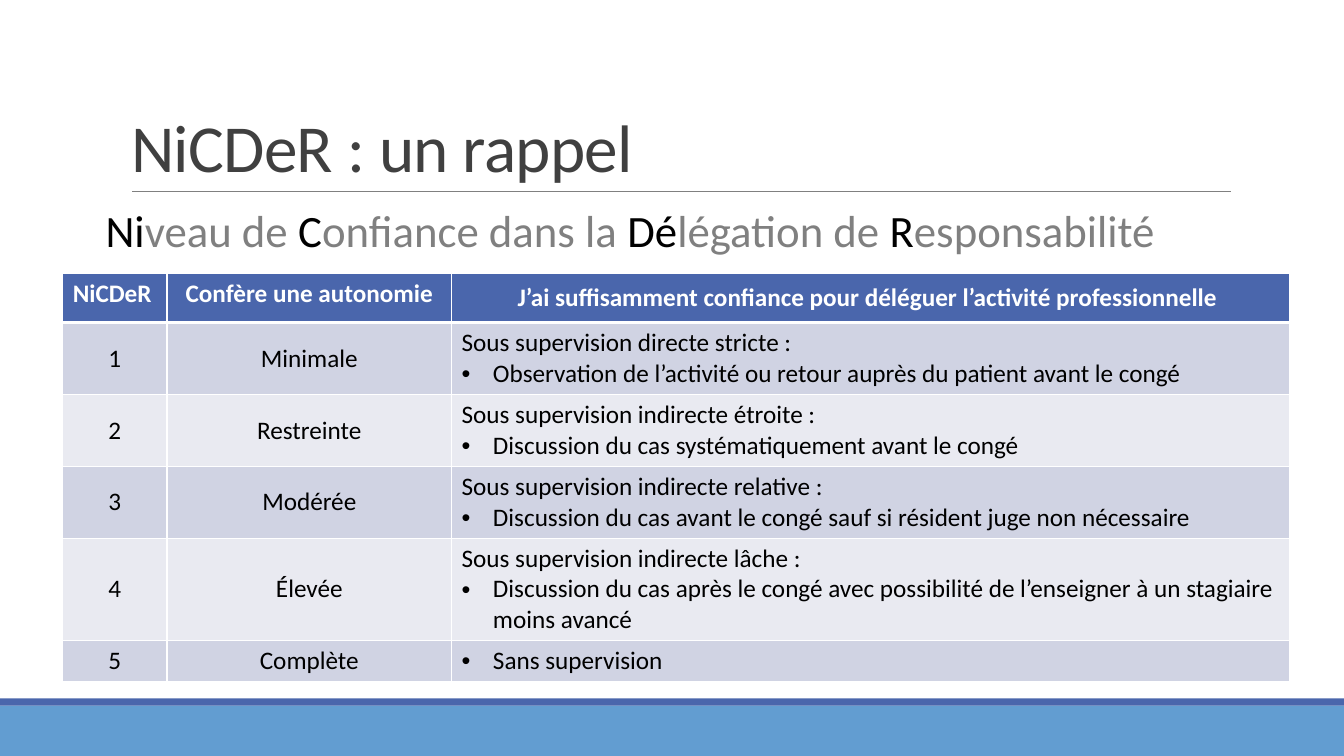
from lxml.etree import SubElement
from pptx import Presentation
from pptx.dml.color import RGBColor
from pptx.enum.shapes import MSO_CONNECTOR as Connector, MSO_SHAPE as Shape
from pptx.enum.text import MSO_ANCHOR as Anchor, MSO_AUTO_SIZE as AutoSize, PP_ALIGN as Align
from pptx.oxml.ns import qn
from pptx.util import Cm, Pt

COLORS = {
    "white": "FFFFFF", "black": "000000", "title": "404040", "gray": "808080",
    "dark blue": "4A66AC", "light blue": "629DD1",
    "odd row": "D0D3E3", "even row": "E9EAF1",
}


def rgb(name):
    return RGBColor.from_string(COLORS[name])


def add_span(para, text, size, color, bold=False):
    """Append one formatted run to a paragraph and return it."""
    span = para.add_run()
    span.text = text
    span.font.name = "Calibri"
    span.font.size = Pt(size)
    span.font.bold = bold
    span.font.color.rgb = rgb(color)
    return span


deck = Presentation()
deck.slide_width, deck.slide_height = Cm(33.87), Cm(19.05)
page = deck.slides.add_slide(deck.slide_layouts[5])

# Footer bands and title rule
for top, height, color in [(17.78, 1.27, "light blue"), (17.6, 0.18, "dark blue")]:
    band = page.shapes.add_shape(Shape.RECTANGLE, 0, Cm(top), deck.slide_width, Cm(height))
    band.shadow.inherit = False
    band.fill.solid()
    band.fill.fore_color.rgb = rgb(color)
    band.line.fill.background()

rule = page.shapes.add_connector(Connector.STRAIGHT, Cm(3.33), Cm(4.82), Cm(31.01), Cm(4.82))
rule.line.color.rgb = rgb("gray")
rule.line.width = Pt(0.5)
SubElement(rule._element.spPr, qn("a:effectLst"))

# Title
title = page.shapes.title
title.left, title.top, title.width, title.height = Cm(3.05), Cm(0.79), Cm(27.94), Cm(4.04)
title.text_frame.auto_size = AutoSize.NONE
title.text_frame.vertical_anchor = Anchor.BOTTOM
para = title.text_frame.paragraphs[0]
para.alignment = Align.LEFT
para.line_spacing = 0.85
span = add_span(para, "NiCDeR : un rappel", 48, "title")
span.font._element.set("spc", "-50")

# Meaning of the acronym: its letters in black, the rest in gray
box = page.shapes.add_textbox(Cm(2.41), Cm(5.13), Cm(27.94), Cm(2.13))
box.text_frame.word_wrap = True
box.text_frame.margin_left, box.text_frame.margin_right = Cm(0.25), 0
para = box.text_frame.paragraphs[0]
para.line_spacing = 0.9
para.space_before, para.space_after = Pt(12), Pt(2)
for letters, rest in [("Ni", "veau de"), (" C", "onfiance dans la "),
                      ("Dé", "légation de"), (" R", "esponsabilité")]:
    add_span(para, letters, 32, "black")
    add_span(para, rest, 32, "gray")

# Table: each cell is a list of lines, and "•" opens a bulleted line
rows = [
    (1.24, ["NiCDeR"], ["Confère une autonomie"],
     ["J’ai suffisamment confiance pour déléguer l’activité professionnelle "]),
    (1.81, ["1"], ["Minimale"],
     ["Sous supervision directe stricte :",
      "•Observation de l’activité ou retour auprès du patient avant le congé"]),
    (1.81, ["2"], ["Restreinte"],
     ["Sous supervision indirecte étroite :",
      "•Discussion du cas systématiquement avant le congé"]),
    (1.81, ["3"], ["Modérée"],
     ["Sous supervision indirecte relative :",
      "•Discussion du cas avant le congé sauf si résident juge non nécessaire"]),
    (2.58, ["4"], ["Élevée"],
     ["Sous supervision indirecte lâche :",
      "•Discussion du cas après le congé avec possibilité de l’enseigner "
      "à un stagiaire moins avancé"]),
    (1.04, ["5"], ["Complète"], ["•Sans supervision"]),
]
widths = [2.63, 7.17, 21.11]
table = page.shapes.add_table(len(rows), len(widths), Cm(1.58), Cm(6.89), Cm(sum(widths)),
                              Cm(sum(row[0] for row in rows))).table
for column, width in zip(table.columns, widths):
    column.width = Cm(width)

for row_index, (height, *cells) in enumerate(rows):
    table.rows[row_index].height = Cm(height)
    header = row_index == 0
    fill = "dark blue" if header else "odd row" if row_index % 2 else "even row"
    for column_index, lines in enumerate(cells):
        cell = table.cell(row_index, column_index)
        properties = cell._tc.get_or_add_tcPr()
        for side in "LRTB":
            thick = (header and side == "B") or (row_index == 1 and side == "T")
            border = SubElement(properties, qn(f"a:ln{side}"), w=str(Pt(3 if thick else 1)))
            SubElement(SubElement(border, qn("a:solidFill")), qn("a:srgbClr"), val=COLORS["white"])
        cell.fill.solid()
        cell.fill.fore_color.rgb = rgb(fill)
        cell.vertical_anchor = Anchor.TOP if header and column_index < 2 else Anchor.MIDDLE
        centered = column_index == 1 or (column_index == 0) != header
        for line_index, line in enumerate(lines):
            frame = cell.text_frame
            para = frame.add_paragraph() if line_index else frame.paragraphs[0]
            para.alignment = Align.CENTER if centered else Align.LEFT
            if line.startswith("•"):
                bullet = para._p.get_or_add_pPr()
                bullet.set("marL", str(Cm(0.79)))
                bullet.set("indent", str(-Cm(0.79)))
                SubElement(bullet, qn("a:buFont"), typeface="Arial")
                SubElement(bullet, qn("a:buChar"), char="•")
            add_span(para, line.lstrip("•"), 18, "white" if header else "black", header)

deck.save("out.pptx")
